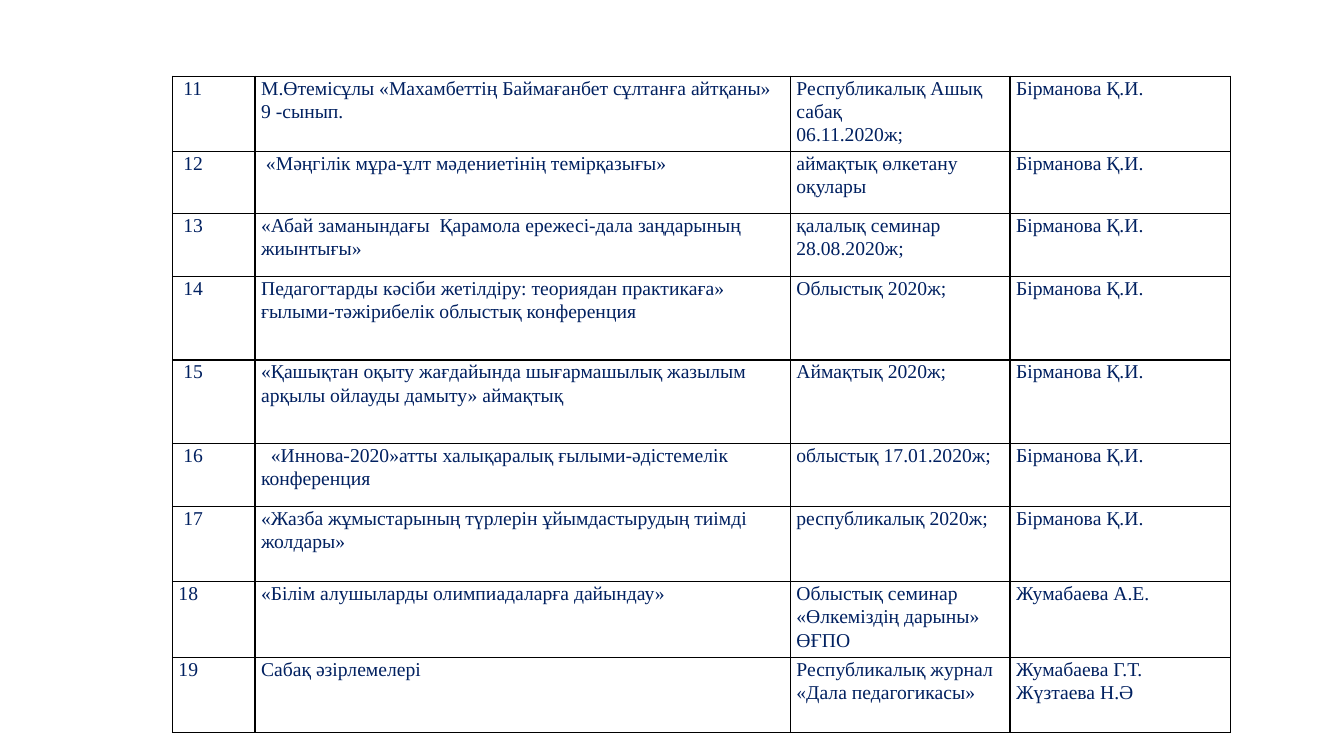
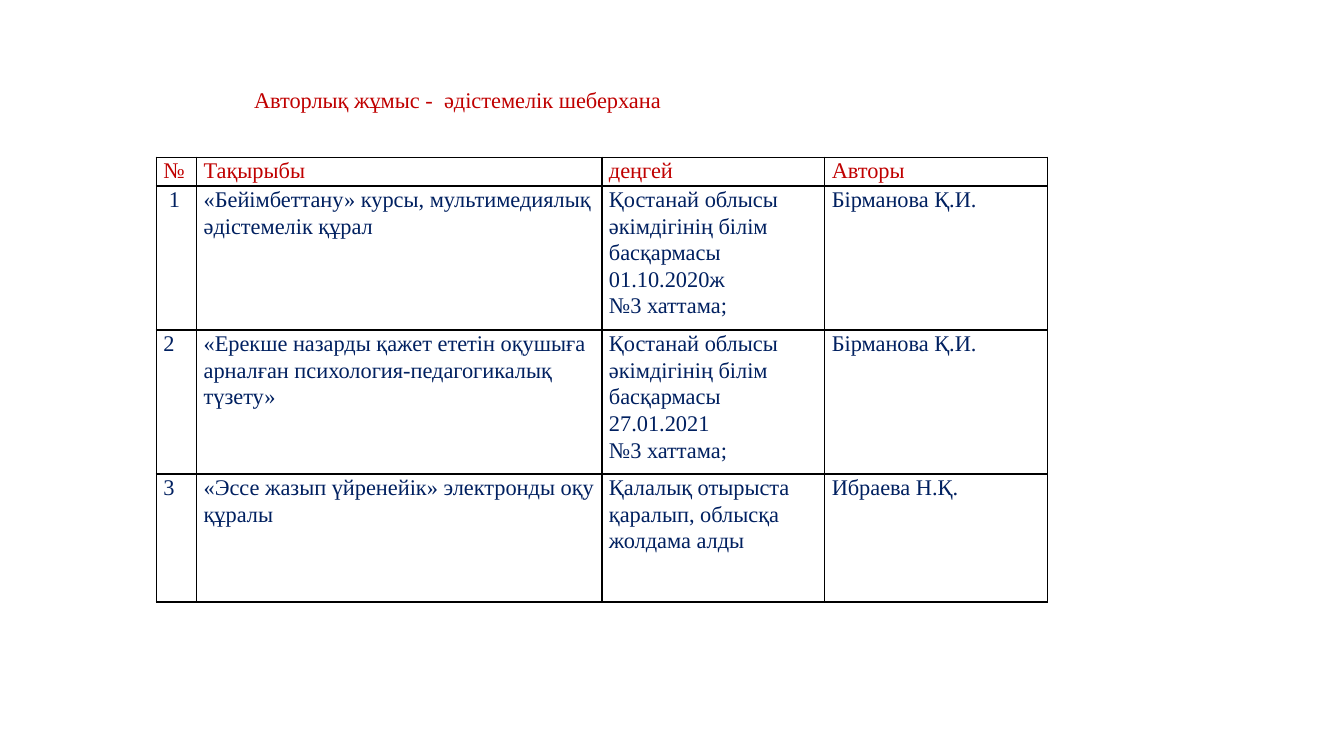
from lxml.etree import SubElement
from pptx import Presentation
from pptx.dml.color import RGBColor
from pptx.enum.text import MSO_ANCHOR, MSO_AUTO_SIZE, PP_ALIGN
from pptx.oxml.ns import qn
from pptx.util import Inches, Pt

# Shared look
FONT = "Times New Roman"
COLORS = {"heading": "C00000", "body": "002060", "border": "000000"}
LINE_SPACING = 1.07

presentation = Presentation()
presentation.slide_width = Inches(13.33)
presentation.slide_height = Inches(7.5)
# One percent of the slide in each direction
ACROSS = presentation.slide_width / 100
DOWN = presentation.slide_height / 100


def write_text(frame, text, *, size, color, spacing=LINE_SPACING, indent=0):
    """Write one paragraph per line of text; indent (points) moves the first line."""
    frame.text = text
    frame.word_wrap = True
    for paragraph in frame.paragraphs:
        paragraph.alignment = PP_ALIGN.LEFT
        paragraph.line_spacing = spacing
        paragraph.font.name = FONT
        paragraph.font.size = Pt(size)
        paragraph.font.color.rgb = RGBColor.from_string(COLORS[color])
    if indent:
        properties = frame.paragraphs[0]._p.get_or_add_pPr()
        properties.set("marL", "0")
        properties.set("indent", str(Pt(indent)))


def add_table(slide, rows, *, left, top, columns, heights, size, margin,
              indents, header=False):
    """Draw a bordered table; lengths are percentages of the slide."""
    table = slide.shapes.add_table(
        len(rows), len(columns), int(left * ACROSS), int(top * DOWN),
        int(sum(columns) * ACROSS), int(sum(heights) * DOWN)).table
    table.first_row = header
    table.horz_banding = False
    for column, width in zip(table.columns, columns):
        column.width = int(width * ACROSS)
    for row_index, (row, height) in enumerate(zip(rows, heights)):
        table.rows[row_index].height = int(height * DOWN)
        for column_index, text in enumerate(row):
            cell = table.cell(row_index, column_index)
            cell.margin_left = cell.margin_right = Inches(margin)
            cell.margin_top = cell.margin_bottom = 0
            color = "heading" if header and row_index == 0 else "body"
            write_text(cell.text_frame, text, size=size, color=color,
                       indent=indents.get((row_index, column_index), 0))
            # Borders come before the fill in the cell properties
            properties = cell._tc.get_or_add_tcPr()
            for side in ("a:lnL", "a:lnR", "a:lnT", "a:lnB"):
                line = SubElement(properties, qn(side), w=str(Pt(1)))
                fill = SubElement(line, qn("a:solidFill"))
                SubElement(fill, qn("a:srgbClr"), val=COLORS["border"])
            cell.fill.background()


# Slide 1: list of lessons and talks
TEACHER = "Бірманова Қ.И."
talks = [
    ("11", "М.Өтемісұлы «Махамбеттің Баймағанбет сұлтанға айтқаны» 9 -сынып.",
     "Республикалық Ашық сабақ\n06.11.2020ж;", TEACHER),
    ("12", "«Мәңгілік мұра-ұлт мәдениетінің темірқазығы»",
     "аймақтық өлкетану оқулары", TEACHER),
    ("13", "«Абай заманындағы  Қарамола ережесі-дала заңдарының жиынтығы»",
     "қалалық семинар 28.08.2020ж;", TEACHER),
    ("14", "Педагогтарды кәсіби жетілдіру: теориядан практикаға» "
     "ғылыми-тәжірибелік облыстық конференция", "Облыстық 2020ж;", TEACHER),
    ("15", "«Қашықтан оқыту жағдайында шығармашылық жазылым арқылы "
     "ойлауды дамыту» аймақтық", "Аймақтық 2020ж;", TEACHER),
    ("16", "«Иннова-2020»атты халықаралық ғылыми-әдістемелік конференция",
     "облыстық 17.01.2020ж;", TEACHER),
    ("17", "«Жазба жұмыстарының түрлерін ұйымдастырудың тиімді жолдары»",
     "республикалық 2020ж;", TEACHER),
    ("18", "«Білім алушыларды олимпиадаларға дайындау»",
     "Облыстық семинар\n«Өлкеміздің дарыны» ӨҒПО", "Жумабаева А.Е."),
    ("19", "Сабақ әзірлемелері",
     "Республикалық журнал\n«Дала педагогикасы»", "Жумабаева Г.Т.\nЖүзтаева Н.Ә"),
]
talk_indents = {(row_index, 0): 3.5 for row_index in range(7)}
talk_indents.update({(1, 1): 3.5, (5, 1): 7})
slide = presentation.slides.add_slide(presentation.slide_layouts[6])
add_table(slide, talks, left=12.83, top=10.07,
          columns=[6.15, 39.83, 16.35, 16.43],
          heights=[9.95, 8.27, 8.27, 11.07, 11.07, 8.27, 10, 10, 9.95],
          size=14, margin=0.06, indents=talk_indents)

# Slide 2: authors' works under a heading
works = [
    ("№", "Тақырыбы", "деңгей", "Авторы"),
    ("1", "«Бейімбеттану» курсы, мультимедиялық әдістемелік құрал",
     "Қостанай облысы әкімдігінің білім басқармасы 01.10.2020ж\n№3 хаттама;", TEACHER),
    ("2", "«Ерекше назарды қажет ететін оқушыға арналған "
     "психология-педагогикалық түзету»",
     "Қостанай облысы әкімдігінің білім басқармасы 27.01.2021\n№3 хаттама;", TEACHER),
    ("3", "«Эссе жазып үйренейік» электронды оқу құралы",
     "Қалалық отырыста қаралып, облысқа жолдама алды", "Ибраева Н.Қ."),
]
slide = presentation.slides.add_slide(presentation.slide_layouts[5])
title = slide.shapes.title
title.left, title.width = int(18.15 * ACROSS), int(53.34 * ACROSS)
title.top, title.height = int(10.53 * DOWN), int(5.33 * DOWN)
title.text_frame.auto_size = MSO_AUTO_SIZE.NONE
title.text_frame.vertical_anchor = MSO_ANCHOR.MIDDLE
write_text(title.text_frame, "Авторлық жұмыс -  әдістемелік шеберхана",
           size=16, color="heading", spacing=1.0)
add_table(slide, works, left=11.63, top=20.8,
          columns=[3, 30.16, 16.58, 16.58], heights=[3.8, 19.05, 19.05, 16.93],
          size=16, margin=0.07, indents={(1, 0): 4}, header=True)

presentation.save("out.pptx")
